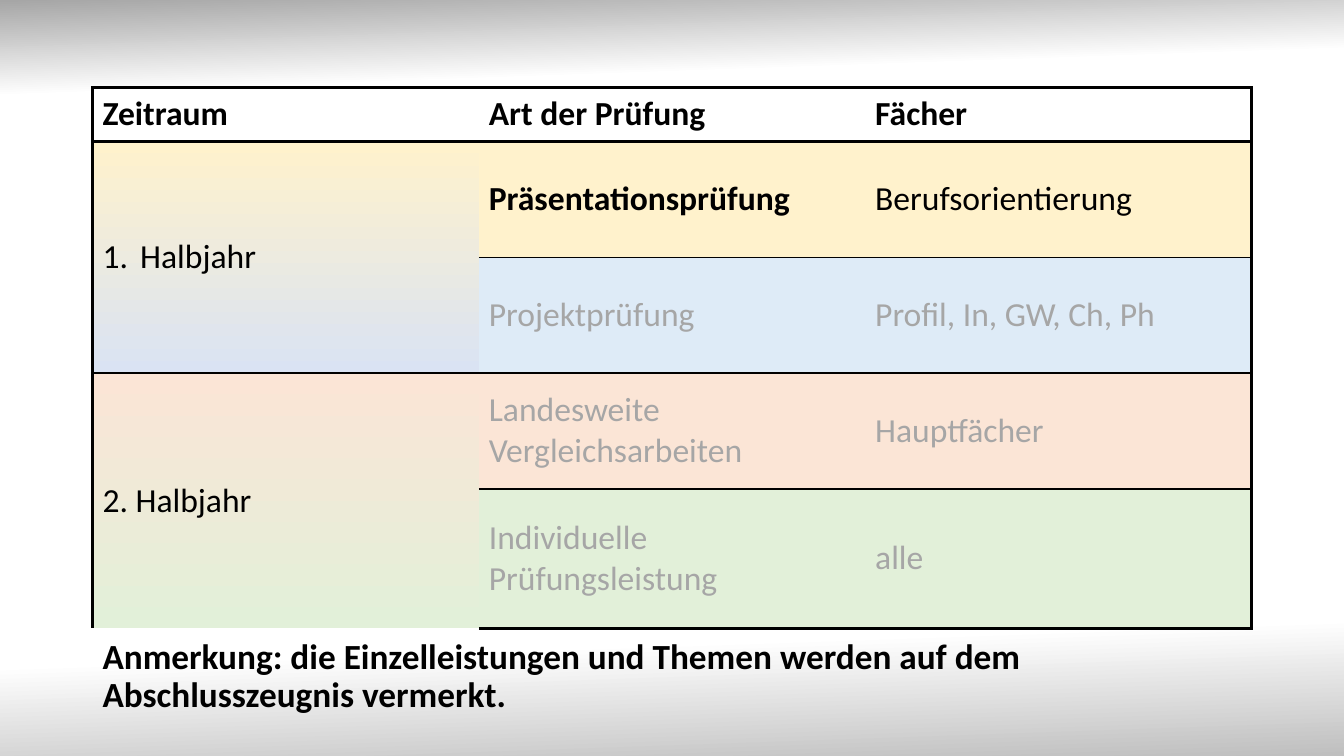
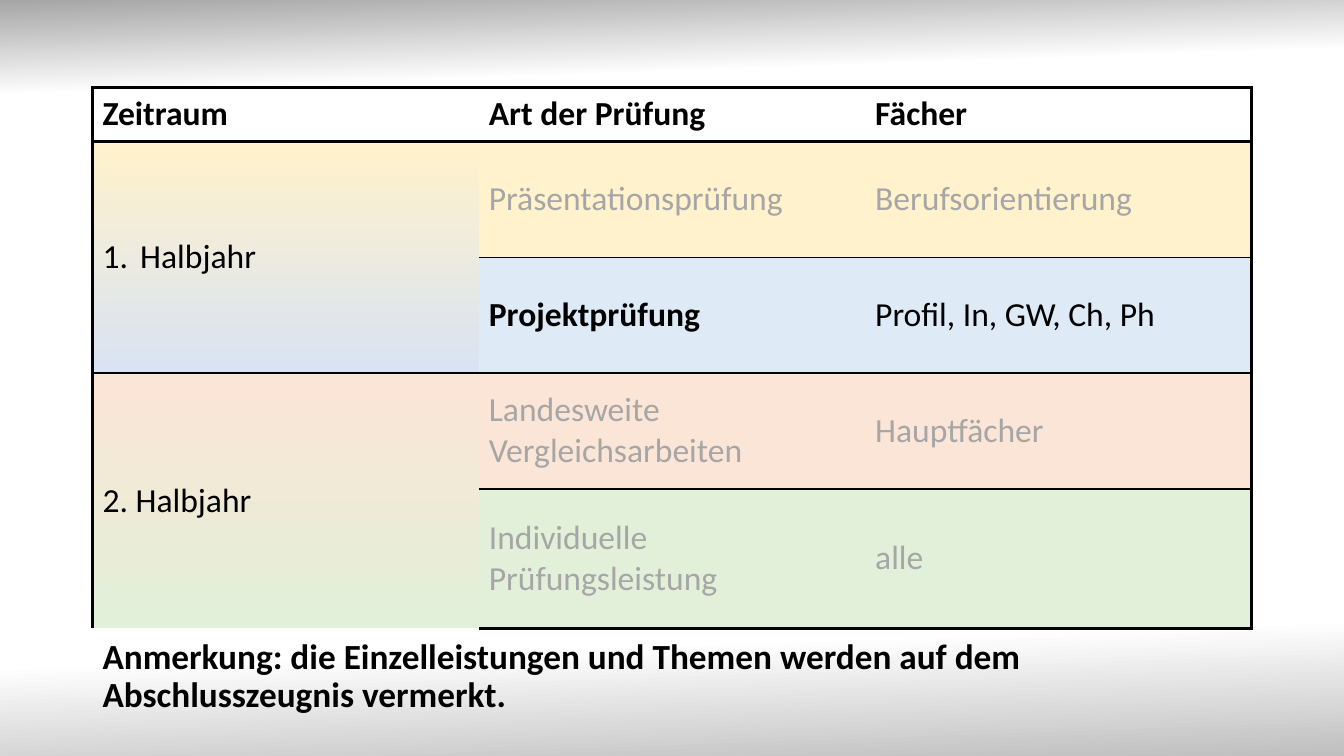
"""Builds two slides that highlight one examination each in a shared schedule table."""
from lxml import etree
from pptx import Presentation
from pptx.dml.color import RGBColor
from pptx.enum.text import MSO_ANCHOR as Anchor, MSO_AUTO_SIZE as AutoSize, PP_ALIGN as Align
from pptx.oxml import parse_xml
from pptx.oxml.ns import nsdecls, qn
from pptx.util import Cm, Pt

FONT = "Calibri"
BLACK, GREY, WHITE = "000000", "A6A6A6", "FFFFFF"
THICK, THIN = 2.25, 1

NOTE = "Anmerkung: die Einzelleistungen und Themen werden auf dem Abschlusszeugnis vermerkt."
HEADERS = ["Zeitraum", "Art der Prüfung", "Fächer"]
EXAMS = [
    ("Präsentationsprüfung", "Berufsorientierung", "FFF2CC"),
    ("Projektprüfung", "Profil, In, GW, Ch, Ph", "DEEBF7"),
    ("Landesweite Vergleichsarbeiten", "Hauptfächer", "FBE5D6"),
    ("Individuelle Prüfungsleistung", "alle", "E2F0D9"),
]
TERMS = [
    ("Halbjahr", True, ("FFF2CC", "DAE3F3")),
    ("2. Halbjahr", False, ("FBE5D6", "E2F0D9")),
]
HIGHLIGHTED_EXAMS = [0, 1]
BACKGROUND_STOPS = [(0, GREY), (12, WHITE), (83, WHITE), (100, "BFBFBF")]

LEFT, WIDTH = Cm(2.33), Cm(29.21)
TABLE_TOP, NOTE_TOP, NOTE_HEIGHT = Cm(2.21), Cm(16.03), Cm(2.08)
ROW_HEIGHTS = [Cm(1.35), Cm(2.92), Cm(2.92), Cm(2.92), Cm(3.51)]
NUMBER_INDENT = Cm(0.95)


def color(value):
    return RGBColor.from_string(value)


def set_background(master):
    stops = "".join(
        f'<a:gs pos="{position * 1000}"><a:srgbClr val="{value}"/></a:gs>'
        for position, value in BACKGROUND_STOPS
    )
    background = parse_xml(
        f'<p:bg {nsdecls("p", "a")}><p:bgPr><a:gradFill rotWithShape="1"><a:gsLst>{stops}</a:gsLst>'
        '<a:lin ang="5280000" scaled="0"/></a:gradFill><a:effectLst/></p:bgPr></p:bg>'
    )
    content = master.element.find(qn("p:cSld"))
    for previous in content.findall(qn("p:bg")):
        content.remove(previous)
    content.insert(0, background)


def add_span(para, text, size, bold, value):
    span = para.add_run()
    span.text = text
    span.font.name = FONT
    span.font.size = Pt(size)
    span.font.bold = bold
    span.font.color.rgb = color(value)


def write_cell(cell, text, fill, bold=False, value=BLACK):
    cell.vertical_anchor = Anchor.MIDDLE
    if isinstance(fill, tuple):
        cell.fill.gradient()
        cell.fill.gradient_angle = 270
        for stop, shade in zip(cell.fill.gradient_stops, fill):
            stop.color.rgb = color(shade)
    else:
        cell.fill.solid()
        cell.fill.fore_color.rgb = color(fill)
    add_span(cell.text_frame.paragraphs[0], text, 24, bold, value)


def number_paragraph(para):
    properties = para._p.get_or_add_pPr()
    properties.set("marL", str(NUMBER_INDENT))
    properties.set("indent", str(-NUMBER_INDENT))
    etree.SubElement(properties, qn("a:buAutoNum"), type="arabicPeriod")


def set_borders(cell, left, right, top, bottom):
    properties = cell._tc.get_or_add_tcPr()
    for index, (side, width) in enumerate(zip("LRTB", (left, right, top, bottom))):
        paint = f'<a:solidFill><a:srgbClr val="{BLACK}"/></a:solidFill>' if width else "<a:noFill/>"
        line = parse_xml(f'<a:ln{side} {nsdecls("a")} w="{Pt(width)}">{paint}</a:ln{side}>')
        properties.insert(index, line)


def border_width(boundary, column):
    if boundary in (2, 4):
        return THIN if column else 0
    return THICK


def add_schedule(slide, highlighted):
    rows, columns = len(ROW_HEIGHTS), len(HEADERS)
    frame = slide.shapes.add_table(rows, columns, LEFT, TABLE_TOP, WIDTH, sum(ROW_HEIGHTS))
    table = frame.table
    table.first_row = table.horz_banding = False
    for row, height in zip(table.rows, ROW_HEIGHTS):
        row.height = height
    for column, header in enumerate(HEADERS):
        write_cell(table.cell(0, column), header, WHITE, bold=True)
    for index, (exam, subjects, fill) in enumerate(EXAMS):
        active = index == highlighted
        value = BLACK if active else GREY
        write_cell(table.cell(index + 1, 1), exam, fill, active, value)
        write_cell(table.cell(index + 1, 2), subjects, fill, value=value)
    for index, (term, numbered, fill) in enumerate(TERMS):
        first = 1 + 2 * index
        cell = table.cell(first, 0)
        cell.merge(table.cell(first + 1, 0))
        write_cell(cell, term, fill)
        if numbered:
            number_paragraph(cell.text_frame.paragraphs[0])
    for row in range(rows):
        for column in range(columns):
            set_borders(
                table.cell(row, column),
                THICK if column == 0 else 0,
                THICK if column == columns - 1 else 0,
                border_width(row, column),
                border_width(row + 1, column),
            )


def add_note(slide):
    title = slide.shapes.title
    title.left, title.top, title.width, title.height = LEFT, NOTE_TOP, WIDTH, NOTE_HEIGHT
    frame = title.text_frame
    frame.word_wrap = True
    frame.auto_size = AutoSize.NONE
    frame.vertical_anchor = Anchor.MIDDLE
    para = frame.paragraphs[0]
    para.alignment = Align.LEFT
    para.line_spacing = 0.9
    add_span(para, NOTE, 25.2, True, BLACK)


def main():
    deck = Presentation()
    deck.slide_width, deck.slide_height = Cm(33.87), Cm(19.05)
    set_background(deck.slide_master)
    for highlighted in HIGHLIGHTED_EXAMS:
        page = deck.slides.add_slide(deck.slide_layouts[5])
        add_note(page)
        add_schedule(page, highlighted)
    deck.save("out.pptx")


if __name__ == "__main__":
    main()
